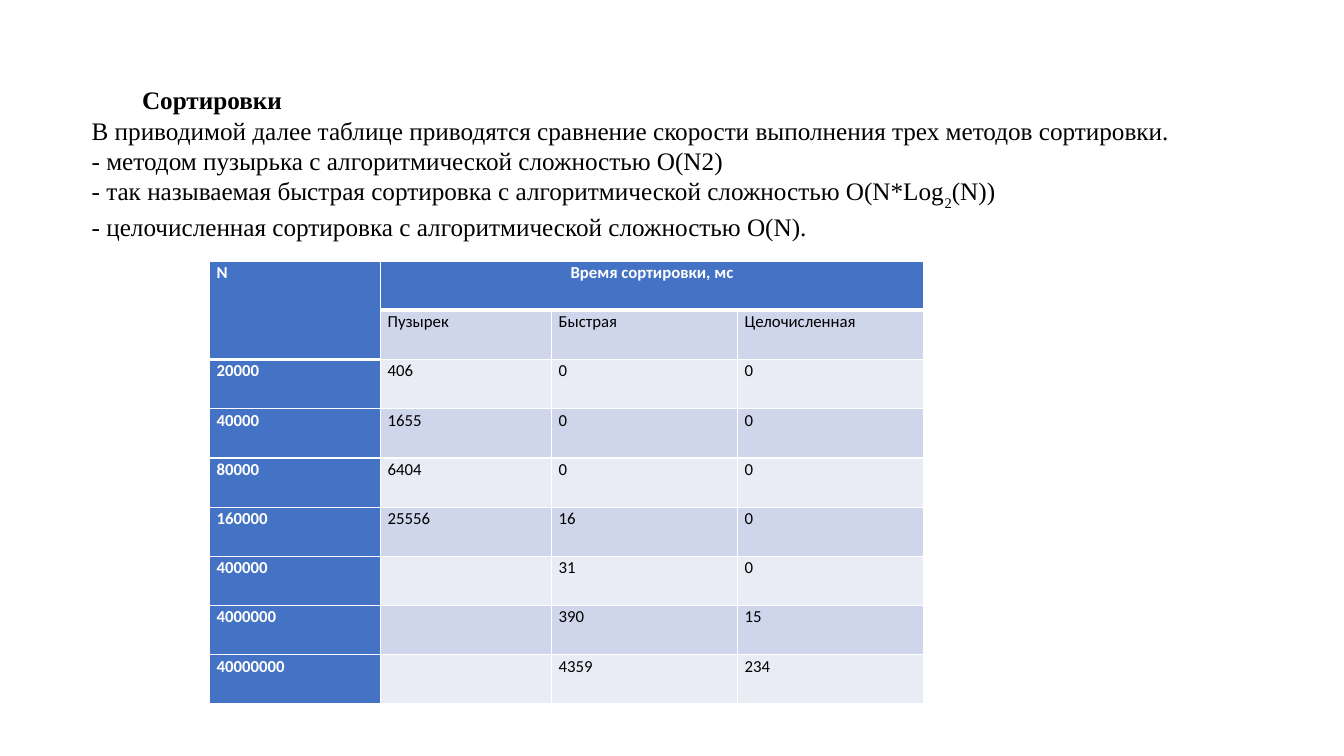
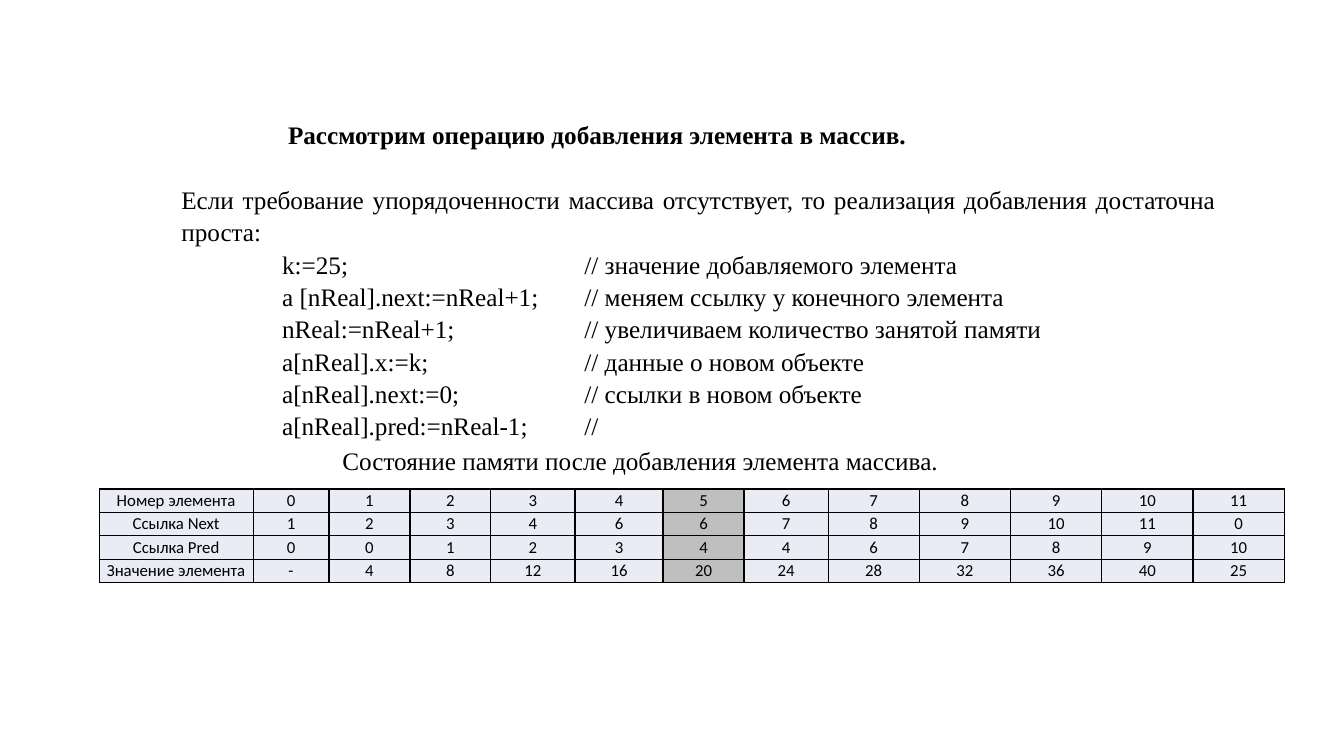
from lxml.etree import SubElement
from pptx import Presentation
from pptx.dml.color import RGBColor
from pptx.enum.text import PP_ALIGN
from pptx.oxml.ns import qn
from pptx.util import Cm, Pt

# Shared look
BLACK, WHITE = "000000", "FFFFFF"
BLUE, BAND_DARK, BAND_LIGHT, GRAY = "4472C4", "CFD5EA", "E9EBF5", "BFBFBF"
TEXT_FONT, TABLE_FONT = "Times New Roman", "Calibri"
TEXT_SIZE, TABLE_SIZE = 18, 12
LINE_SPACING = 1.07

# Slide 1: comparison of sorting methods
SORT_TITLE = "Сортировки"
SORT_LINES = [
    ["В приводимой далее таблице приводятся сравнение скорости выполнения трех методов сортировки."],
    ["- методом пузырька с алгоритмической сложностью O(N2)"],
    ["- так называемая быстрая сортировка с алгоритмической сложностью O(N*Log", ("2",), "(N))"],
    ["- целочисленная сортировка с алгоритмической сложностью O(N)."],
]
SORT_ROWS = [
    ["N", "Время сортировки, мс", "", ""],
    ["", "Пузырек", "Быстрая", "Целочисленная"],
    ["20000", "406", "0", "0"],
    ["40000", "1655", "0", "0"],
    ["80000", "6404", "0", "0"],
    ["160000", "25556", "16", "0"],
    ["400000", "", "31", "0"],
    ["4000000", "", "390", "15"],
    ["40000000", "", "4359", "234"],
]
SORT_WIDTHS = [4.31, 4.31, 4.69, 4.69]

# Slide 2: adding an element to the array
ADD_TITLE = "Рассмотрим операцию добавления элемента в массив."
ADD_INTRO = ("Если требование упорядоченности массива отсутствует, "
             "то реализация добавления достаточна проста:")
ADD_CODE = [
    ("k:=25;", "// значение добавляемого элемента"),
    ("a [nReal].next:=nReal+1;", "// меняем ссылку у конечного элемента"),
    ("nReal:=nReal+1;", "// увеличиваем количество занятой памяти"),
    ("a[nReal].x:=k;", "// данные о новом объекте"),
    ("a[nReal].next:=0;", "// ссылки в новом объекте"),
    ("a[nReal].pred:=nReal-1;", "//"),
]
CODE_TABS = [2.54, 10.16]
MEMORY_CAPTION = "Состояние памяти после добавления элемента массива."
MEMORY_ROWS = [
    ["Номер элемента", *range(12)],
    ["Ссылка Next", 1, 2, 3, 4, 6, 6, 7, 8, 9, 10, 11, 0],
    ["Ссылка Pred", 0, 0, 1, 2, 3, 4, 4, 6, 7, 8, 9, 10],
    ["Значение элемента", "-", *range(4, 41, 4), 25],
]
MEMORY_WIDTHS = [3.88, 1.91, 2.04, 2.04, 2.12, 2.22, 2.04, 2.12] + [2.3] * 5
MARKED_COLUMN = 6


def rgb(color):
    return RGBColor.from_string(color)


def add_run(paragraph, text, font=TEXT_FONT, size=TEXT_SIZE, color=BLACK, bold=False):
    run = paragraph.add_run()
    run.text = text
    run.font.name, run.font.size, run.font.bold = font, Pt(size), bold
    run.font.color.rgb = rgb(color)
    return run


def add_text(slide, left, top, width, height):
    frame = slide.shapes.add_textbox(Cm(left), Cm(top), Cm(width), Cm(height)).text_frame
    frame.word_wrap = True
    return frame


def set_indent(paragraph, indent):
    paragraph._p.get_or_add_pPr().set("marL", str(Cm(indent)))


def set_tabs(paragraph, positions):
    tabs = SubElement(paragraph._p.get_or_add_pPr(), qn("a:tabLst"))
    for position in positions:
        SubElement(tabs, qn("a:tab"), pos=str(Cm(position)), algn="l")


def set_borders(cell, color, widths):
    """Widths in points: left, right, top, bottom."""
    properties = cell._tc.get_or_add_tcPr()
    for side, width in zip("LRTB", widths):
        line = SubElement(properties, qn(f"a:ln{side}"), w=str(Pt(width)))
        fill = SubElement(line, qn("a:solidFill"))
        SubElement(fill, qn("a:srgbClr"), val=color)


def add_table(slide, left, top, widths, row_height, rows, style):
    """style(row, column) gives fill, font colour, bold, alignment, border colour and widths."""
    table = slide.shapes.add_table(len(rows), len(widths), Cm(left), Cm(top),
                                   Cm(sum(widths)), Cm(row_height * len(rows))).table
    table.first_row = table.horz_banding = False
    for column, width in zip(table.columns, widths):
        column.width = Cm(width)
    for row_index, values in enumerate(rows):
        table.rows[row_index].height = Cm(row_height)
        for column_index, value in enumerate(values):
            fill, color, bold, align, border, border_widths = style(row_index, column_index)
            cell = table.cell(row_index, column_index)
            cell.margin_left = cell.margin_right = Cm(0.18)
            cell.margin_top = cell.margin_bottom = 0
            set_borders(cell, border, border_widths)
            cell.fill.solid()
            cell.fill.fore_color.rgb = rgb(fill)
            paragraph = cell.text_frame.paragraphs[0]
            paragraph.alignment, paragraph.line_spacing = align, LINE_SPACING
            paragraph.font.size = Pt(TABLE_SIZE)
            if value != "":
                add_run(paragraph, str(value), TABLE_FONT, TABLE_SIZE, color, bold)
    return table


def sort_style(row, column):
    header_end = 1 if column == 0 else 0
    is_header = column == 0 or row == 0
    band = BAND_DARK if row % 2 else BAND_LIGHT
    borders = (1, 1, 3 if row == header_end + 1 else 1, 3 if row <= header_end else 1)
    return (BLUE if is_header else band, WHITE if is_header else BLACK, is_header,
            PP_ALIGN.CENTER if row == 0 and column else PP_ALIGN.LEFT, WHITE, borders)


def memory_style(row, column):
    fill = GRAY if column == MARKED_COLUMN else BAND_LIGHT
    return fill, BLACK, False, PP_ALIGN.CENTER, BLACK, (1, 1, 1, 1)


def build_sort_slide(slide):
    frame = add_text(slide, 2.06, 2.01, 29.8, 4.4)
    title = frame.paragraphs[0]
    set_indent(title, 1.27)
    add_run(title, SORT_TITLE, bold=True)
    for parts in SORT_LINES:
        paragraph = frame.add_paragraph()
        for part in parts:
            # A tuple holds a subscript
            run = add_run(paragraph, part if isinstance(part, str) else part[0])
            if isinstance(part, tuple):
                run.font._element.set("baseline", "-30000")

    table = add_table(slide, 5.28, 6.58, SORT_WIDTHS, 1.24, SORT_ROWS, sort_style)
    table.cell(0, 0).merge(table.cell(1, 0))
    table.cell(0, 1).merge(table.cell(0, 3))


def build_array_slide(slide):
    # Title, introduction and code with aligned remarks
    frame = add_text(slide, 4.32, 2.84, 26.57, 8.43)
    title = frame.paragraphs[0]
    set_indent(title, 2.69)
    title.space_after = Pt(23)
    add_run(title, ADD_TITLE, bold=True)
    intro = frame.add_paragraph()
    intro.alignment = PP_ALIGN.JUSTIFY
    add_run(intro, ADD_INTRO)
    for code, remark in ADD_CODE:
        add_run(frame.add_paragraph(), f"\t{code}\t{remark}")
    for paragraph in frame.paragraphs:
        paragraph.line_spacing = LINE_SPACING
    for paragraph in frame.paragraphs[2:]:
        set_tabs(paragraph, CODE_TABS)

    # Memory state
    add_table(slide, 2.5, 12.32, MEMORY_WIDTHS, 0.59, MEMORY_ROWS, memory_style)
    caption = add_text(slide, 7.24, 11.05, 17.8, 1.04).paragraphs[0]
    caption.alignment, caption.line_spacing = PP_ALIGN.CENTER, LINE_SPACING
    add_run(caption, MEMORY_CAPTION)


def main():
    presentation = Presentation()
    presentation.slide_width, presentation.slide_height = Cm(33.87), Cm(19.05)
    for build in (build_sort_slide, build_array_slide):
        build(presentation.slides.add_slide(presentation.slide_layouts[6]))
    presentation.save("out.pptx")


if __name__ == "__main__":
    main()
